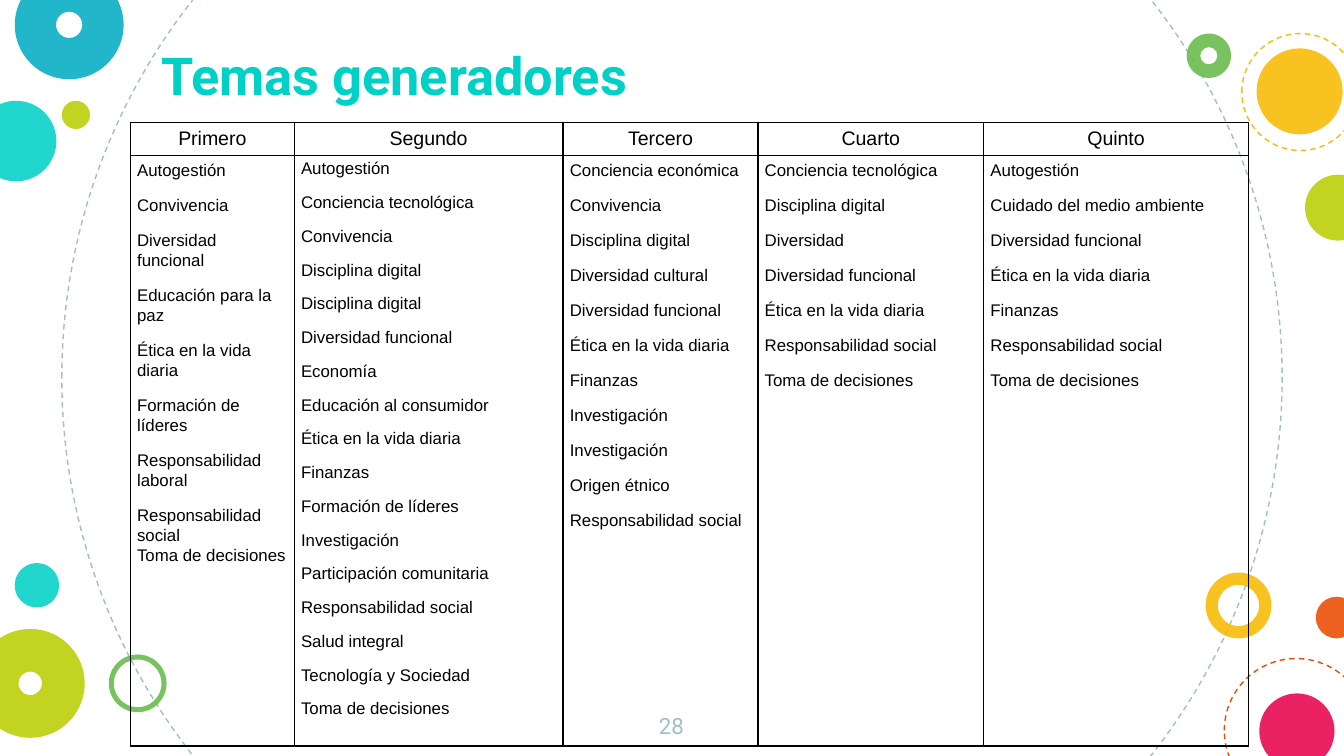
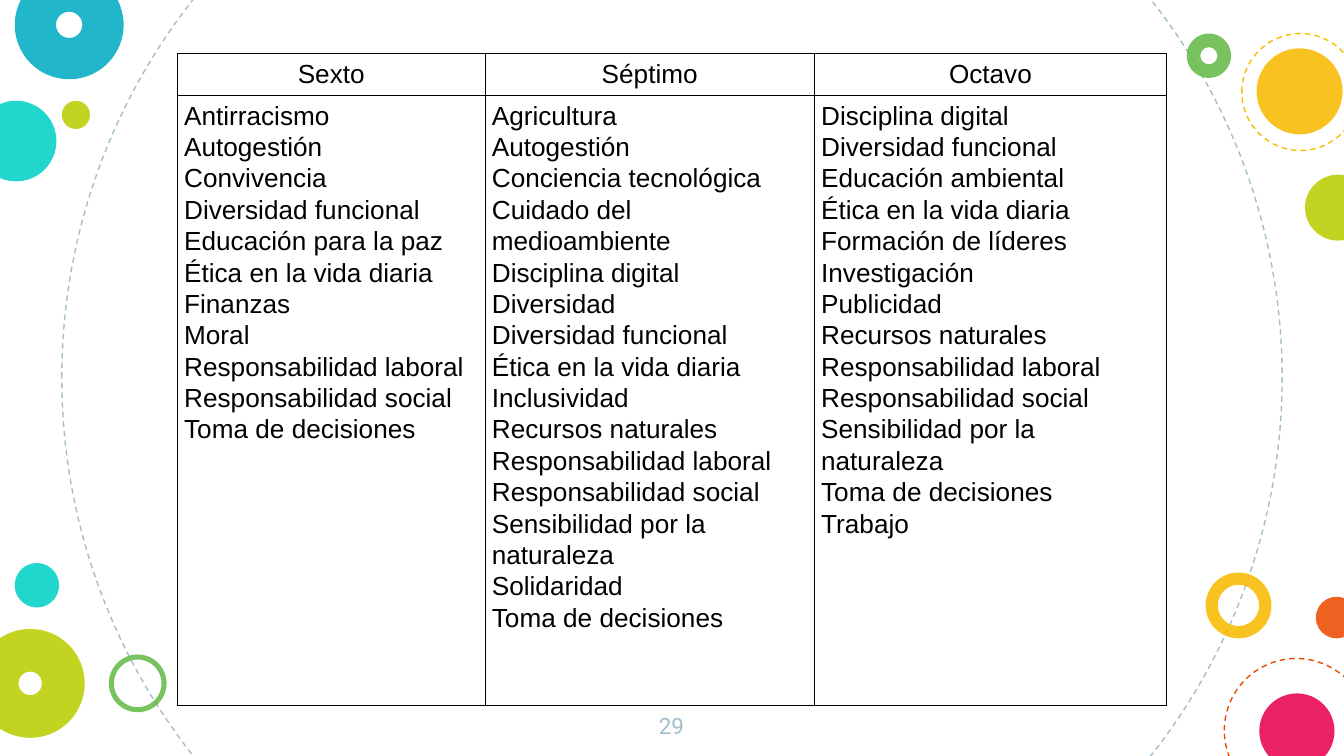
"""Build two slides listing the generating themes of each school grade."""
from lxml.etree import SubElement
from pptx import Presentation
from pptx.dml.color import RGBColor
from pptx.enum.dml import MSO_LINE
from pptx.enum.shapes import MSO_SHAPE
from pptx.enum.text import MSO_ANCHOR, PP_ALIGN
from pptx.oxml import parse_xml
from pptx.oxml.ns import nsdecls, qn
from pptx.util import Inches, Pt

COLORS = {
    "turquoise": "00D1C6", "blue": "00ACC3", "yellow": "F8BB00", "lime": "BBCD00",
    "green": "65BB48", "orange": "ED4A00", "pink": "E8004C", "gray": "A1BECC",
    "black": "000000",
}

CIRCLES = [
    (0.46, -1.73, 9.08, "gray", "dashed"),
    (-0.18, 0.75, 0.6, "turquoise", "disc"),
    (8.97, 4.26, 0.49, "yellow", 0.186),
    (0.11, -0.22, 0.81, "blue", 0.379),
    (0.46, 0.75, 0.21, "lime", "disc"),
    (9.11, 4.9, 1.07, "orange", "dashed"),
    (0.81, 4.87, 0.43, "green", 0.088),
    (9.79, 4.44, 0.31, "orange", "disc"),
    (-0.18, 4.68, 0.81, "lime", 0.392),
    (9.37, 5.16, 0.56, "pink", "disc"),
    (8.83, 0.25, 0.33, "green", 0.306),
    (9.35, 0.36, 0.64, "yellow", "disc"),
    (9.71, 1.3, 0.49, "lime", "disc"),
    (9.24, 0.25, 0.87, "yellow", "dashed"),
    (0.11, 4.19, 0.33, "turquoise", "disc"),
]

SLIDES = [
    {
        "title": "Temas generadores", "number": "28",
        "position": (0.97, 0.91), "rows": (0.24, 4.38),
        "header_size": 10.5, "body_size": 9, "space_after": 8,
        "columns": [
            ("Primero", 1.22, 1.07, [
                "Autogestión", "Convivencia", "Diversidad funcional",
                "Educación para la paz", "Ética en la vida diaria",
                "Formación de líderes", "Responsabilidad laboral",
                "Responsabilidad social\vToma de decisiones"]),
            ("Segundo", 2, 1.0, [
                "Autogestión", "Conciencia tecnológica", "Convivencia",
                "Disciplina digital", "Disciplina digital", "Diversidad funcional",
                "Economía", "Educación al consumidor", "Ética en la vida diaria",
                "Finanzas", "Formación de líderes", "Investigación",
                "Participación comunitaria", "Responsabilidad social",
                "Salud integral", "Tecnología y Sociedad", "Toma de decisiones"]),
            ("Tercero", 1.45, 1.07, [
                "Conciencia económica", "Convivencia", "Disciplina digital",
                "Diversidad cultural", "Diversidad funcional",
                "Ética en la vida diaria", "Finanzas", "Investigación",
                "Investigación", "Origen étnico", "Responsabilidad social"]),
            ("Cuarto", 1.68, 1.07, [
                "Conciencia tecnológica", "Disciplina digital", "Diversidad",
                "Diversidad funcional", "Ética en la vida diaria",
                "Responsabilidad social", "Toma de decisiones"]),
            ("Quinto", 1.97, 1.07, [
                "Autogestión", "Cuidado del medio ambiente", "Diversidad funcional",
                "Ética en la vida diaria", "Finanzas", "Responsabilidad social",
                "Toma de decisiones"]),
        ],
    },
    {
        "title": None, "number": "29",
        "position": (1.32, 0.4), "rows": (0.3, 4.54),
        "header_size": 14, "body_size": 14, "space_after": 0,
        "columns": [
            ("Sexto", 2.29, 1.07, [
                "Antirracismo", "Autogestión", "Convivencia", "Diversidad funcional",
                "Educación para la paz", "Ética en la vida diaria", "Finanzas",
                "Moral", "Responsabilidad laboral", "Responsabilidad social",
                "Toma de decisiones"]),
            ("Séptimo", 2.45, 1.07, [
                "Agricultura", "Autogestión", "Conciencia tecnológica",
                "Cuidado del medioambiente", "Disciplina digital", "Diversidad",
                "Diversidad funcional", "Ética en la vida diaria", "Inclusividad",
                "Recursos naturales", "Responsabilidad laboral",
                "Responsabilidad social", "Sensibilidad por la naturaleza",
                "Solidaridad", "Toma de decisiones"]),
            ("Octavo", 2.62, 1.07, [
                "Disciplina digital", "Diversidad funcional", "Educación ambiental",
                "Ética en la vida diaria", "Formación de líderes", "Investigación",
                "Publicidad", "Recursos naturales", "Responsabilidad laboral",
                "Responsabilidad social", "Sensibilidad por la naturaleza",
                "Toma de decisiones", "Trabajo"]),
        ],
    },
]


def rgb(name):
    return RGBColor.from_string(COLORS[name])


def format_font(paragraph, name, size, color, bold=False):
    font = paragraph.font
    font.name, font.size, font.bold = name, Pt(size), bold
    font.color.rgb = rgb(color)


def set_margins(frame, horizontal, top, bottom):
    frame.margin_left = frame.margin_right = Inches(horizontal)
    frame.margin_top, frame.margin_bottom = Inches(top), Inches(bottom)


def add_circle(slide, left, top, diameter, color, style):
    is_ring = isinstance(style, float)
    shape = slide.shapes.add_shape(
        MSO_SHAPE.DONUT if is_ring else MSO_SHAPE.OVAL,
        Inches(left), Inches(top), Inches(diameter), Inches(diameter))
    shape.shadow.inherit = False
    if style == "dashed":
        shape.fill.background()
        shape.line.color.rgb = rgb(color)
        shape.line.width = Pt(0.75)
        shape.line.dash_style = MSO_LINE.DASH
        return shape
    if is_ring:
        shape.adjustments[0] = style
    shape.fill.solid()
    shape.fill.fore_color.rgb = rgb(color)
    fill_color = shape.element.spPr.find(qn("a:solidFill")).find(qn("a:srgbClr"))
    SubElement(fill_color, qn("a:alpha"), val="87000")
    shape.line.fill.background()
    return shape


def decorate_master(presentation, slide):
    master_tree = presentation.slide_master.shapes.element
    for circle in CIRCLES:
        master_tree.append(add_circle(slide, *circle).element)


def add_title(slide, text):
    title = slide.shapes.title
    title.left, title.top = Inches(1.1), Inches(0.27)
    title.width, title.height = Inches(8.06), Inches(0.57)
    frame = title.text_frame
    frame.text = text
    frame.vertical_anchor = MSO_ANCHOR.TOP
    set_margins(frame, 0.1, 0.05, 0.05)
    paragraph = frame.paragraphs[0]
    paragraph.alignment = PP_ALIGN.LEFT
    paragraph.space_before = Pt(0)
    format_font(paragraph, "Roboto", 28, "turquoise", bold=True)


def add_number(slide, number):
    box = slide.shapes.add_textbox(Inches(4.74), Inches(5.2), Inches(0.51), Inches(0.43))
    frame = box.text_frame
    frame.word_wrap = True
    set_margins(frame, 0.1, 0.1, 0.1)
    frame.text = number
    paragraph = frame.paragraphs[0]
    paragraph.alignment = PP_ALIGN.CENTER
    format_font(paragraph, "Roboto", 12, "gray")


def add_borders(cell):
    properties = cell._tc.get_or_add_tcPr()
    for index, side in enumerate(("lnL", "lnR", "lnT", "lnB")):
        properties.insert(index, parse_xml(
            f'<a:{side} {nsdecls("a")} w="{Pt(0.75)}"><a:solidFill>'
            f'<a:srgbClr val="{COLORS["black"]}"/></a:solidFill></a:{side}>'))


def fill_cell(cell, lines, size, alignment, line_spacing, space_after):
    set_margins(cell, 0.05, 0.03, 0.03)
    cell.fill.background()
    add_borders(cell)
    cell.text_frame.text = "\n".join(lines)
    for paragraph in cell.text_frame.paragraphs:
        paragraph.alignment = alignment
        paragraph.line_spacing = line_spacing
        paragraph.space_after = Pt(space_after)
        format_font(paragraph, "Arial", size, "black")


def add_theme_table(slide, content):
    columns = content["columns"]
    left, top = content["position"]
    width = sum(column[1] for column in columns)
    table = slide.shapes.add_table(
        2, len(columns), Inches(left), Inches(top),
        Inches(width), Inches(sum(content["rows"]))).table
    table.first_row = table.horz_banding = False
    for row, height in zip(table.rows, content["rows"]):
        row.height = Inches(height)
    for index, (grade, column_width, line_spacing, themes) in enumerate(columns):
        table.columns[index].width = Inches(column_width)
        fill_cell(table.cell(0, index), [grade], content["header_size"],
                  PP_ALIGN.CENTER, 1.07, 8)
        fill_cell(table.cell(1, index), themes, content["body_size"],
                  PP_ALIGN.LEFT, line_spacing, content["space_after"])


def main():
    presentation = Presentation()
    presentation.slide_width = Inches(10)
    presentation.slide_height = presentation.slide_width * 9 // 16
    title_only, blank = presentation.slide_layouts[5], presentation.slide_layouts[6]
    for content in SLIDES:
        slide = presentation.slides.add_slide(title_only if content["title"] else blank)
        add_number(slide, content["number"])
        if content["title"]:
            add_title(slide, content["title"])
        add_theme_table(slide, content)
    decorate_master(presentation, presentation.slides[0])
    presentation.save("out.pptx")


if __name__ == "__main__":
    main()
